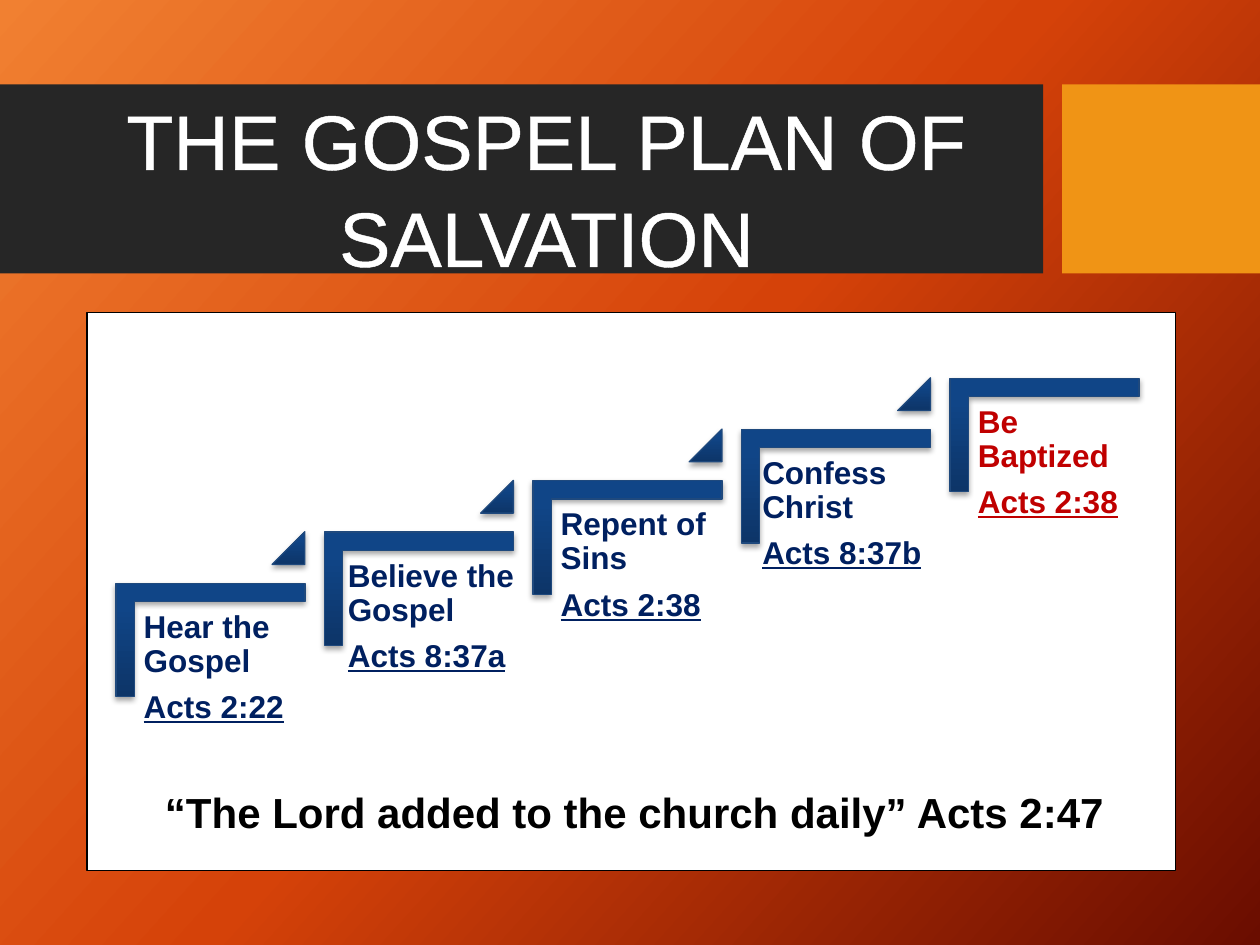
from lxml.etree import SubElement
from pptx import Presentation
from pptx.dml.color import RGBColor
from pptx.enum.shapes import MSO_SHAPE
from pptx.enum.text import MSO_ANCHOR, MSO_AUTO_SIZE, PP_ALIGN
from pptx.oxml.ns import qn
from pptx.util import Inches, Pt

WHITE = RGBColor(0xFF, 0xFF, 0xFF)
BLACK = RGBColor(0x00, 0x00, 0x00)
CHARCOAL = RGBColor(0x26, 0x26, 0x26)
AMBER = RGBColor(0xF0, 0x94, 0x15)
NAVY = RGBColor(0x00, 0x20, 0x60)
RED = RGBColor(0xC0, 0x00, 0x00)
STEP_LINE = RGBColor(0x1F, 0x49, 0x7D)
BACKGROUND_STOPS = [
    (0, RGBColor(0xF1, 0x80, 0x31)),
    (50, RGBColor(0xD5, 0x42, 0x09)),
    (100, RGBColor(0x6A, 0x0D, 0x00)),
]
STEP_STOPS = [
    (0, RGBColor(0x0D, 0x35, 0x68)),
    (80, RGBColor(0x10, 0x45, 0x87)),
    (100, RGBColor(0x0E, 0x45, 0x8A)),
]

FONT = "Arial"
STEP_ACROSS, STEP_UP = 1.655, 0.407
# action, verse, text left, text width, text colour
STEPS = [
    ("Hear the Gospel", "Acts 2:22", 1.07, 1.35, NAVY),
    ("Believe the Gospel", "Acts 8:37a", 2.69, 1.51, NAVY),
    ("Repent of Sins", "Acts 2:38", 4.38, 1.35, NAVY),
    ("Confess Christ", "Acts 8:37b", 5.98, 1.63, NAVY),
    ("Be Baptized", "Acts 2:38", 7.69, 1.35, RED),
]


def set_gradient(fill, element, stops, angle):
    """Fill with a linear gradient, angle clockwise, that ignores rotation."""
    fill.gradient()
    gradient = element.find(".//" + qn("a:gradFill"))
    for child in list(gradient):
        gradient.remove(child)
    gradient.set("rotWithShape", "0")
    stop_list = SubElement(gradient, qn("a:gsLst"))
    for position, color in stops:
        stop = SubElement(stop_list, qn("a:gs"), pos=str(position * 1000))
        SubElement(stop, qn("a:srgbClr"), val=str(color))
    SubElement(gradient, qn("a:lin"), ang=str(angle * 60000), scaled="0")


def add_shadow(shape):
    shape.shadow.inherit = False
    effects = shape.element.spPr.find(qn("a:effectLst"))
    shadow = SubElement(effects, qn("a:outerShdw"), blurRad=str(Pt(3.1)),
                        dist=str(Pt(1.8)), dir="5400000", rotWithShape="0")
    color = SubElement(shadow, qn("a:srgbClr"), val=str(BLACK))
    SubElement(color, qn("a:alpha"), val="35000")


def add_rectangle(slide, left, top, width, height, color, line_color=None):
    shape = slide.shapes.add_shape(MSO_SHAPE.RECTANGLE, Inches(left),
                                   Inches(top), Inches(width), Inches(height))
    shape.shadow.inherit = False
    shape.fill.solid()
    shape.fill.fore_color.rgb = color
    if line_color is None:
        shape.line.fill.background()
    else:
        shape.line.color.rgb = line_color
        shape.line.width = Pt(1)


def add_stair_shape(slide, kind, left, top, width, height, adjustments):
    shape = slide.shapes.add_shape(kind, Inches(left), Inches(top),
                                   Inches(width), Inches(height))
    for index, value in enumerate(adjustments):
        shape.adjustments[index] = value
    set_gradient(shape.fill, shape.element, STEP_STOPS, 270)
    shape.line.color.rgb = STEP_LINE
    shape.line.width = Pt(0.75)
    add_shadow(shape)
    return shape


def add_text_box(slide, left, top, width, height):
    box = slide.shapes.add_textbox(Inches(left), Inches(top),
                                   Inches(width), Inches(height))
    box.text_frame.word_wrap = True
    return box.text_frame


def add_run(paragraph, text, size, color, bold=False):
    run = paragraph.add_run()
    run.text = text
    run.font.name = FONT
    run.font.size = Pt(size)
    run.font.bold = bold
    run.font.color.rgb = color
    return run


def add_step_text(slide, action, verse, left, top, width, color):
    frame = add_text_box(slide, left, top, width, 1.18)
    frame.margin_left = frame.margin_right = Inches(0.07)
    frame.margin_top = frame.margin_bottom = Inches(0.07)
    paragraphs = [frame.paragraphs[0], frame.add_paragraph()]
    for paragraph, text in zip(paragraphs, (action, verse)):
        paragraph.line_spacing = 0.9
        paragraph.space_after = Pt(7)
        run = add_run(paragraph, text, 18, color, bold=True)
        run.font.underline = text == verse


def add_steps(slide):
    for index, (action, verse, left, width, color) in enumerate(STEPS):
        across, up = index * STEP_ACROSS, index * STEP_UP
        corner = add_stair_shape(slide, MSO_SHAPE.CORNER, 1.22 + across,
                                 4.33 - up, 0.9, 1.5, (0.161, 0.161))
        corner.rotation = 90
        add_step_text(slide, action, verse, left, 4.78 - up, width, color)
        if index < len(STEPS) - 1:
            add_stair_shape(slide, MSO_SHAPE.ISOSCELES_TRIANGLE,
                            2.16 + across, 4.22 - up, 0.26, 0.26, (1,))


def add_verse(slide, text):
    frame = add_text_box(slide, 0.94, 6.19, 8.19, 0.5)
    frame.auto_size = MSO_AUTO_SIZE.SHAPE_TO_FIT_TEXT
    paragraph = frame.paragraphs[0]
    paragraph.alignment = PP_ALIGN.CENTER
    add_run(paragraph, text, 24, BLACK, bold=True)


def set_title(slide, text):
    title = slide.shapes.title
    title.left, title.top = Inches(0.42), Inches(0.65)
    title.width, title.height = Inches(7.84), Inches(1.58)
    frame = title.text_frame
    frame.word_wrap = True
    frame.auto_size = MSO_AUTO_SIZE.SHAPE_TO_FIT_TEXT
    frame.vertical_anchor = MSO_ANCHOR.TOP
    paragraph = frame.paragraphs[0]
    paragraph.alignment = PP_ALIGN.CENTER
    paragraph.line_spacing = 1.05
    add_run(paragraph, text, 44, WHITE)
    run_properties = title.element.find(".//" + qn("a:rPr"))
    outline = SubElement(run_properties, qn("a:ln"), w=str(Pt(1.45)))
    outline_fill = SubElement(outline, qn("a:solidFill"))
    SubElement(outline_fill, qn("a:srgbClr"), val=str(WHITE))
    run_properties.insert(0, outline)
    # The title stands in front of the dark band.
    title.element.getparent().append(title.element)


def main():
    presentation = Presentation()
    presentation.slide_width = Inches(10)
    presentation.slide_height = Inches(7.5)
    slide = presentation.slides.add_slide(presentation.slide_layouts[5])
    set_gradient(slide.background.fill, slide.element, BACKGROUND_STOPS, 42)
    add_rectangle(slide, 0, 0.67, 8.28, 1.5, CHARCOAL)
    add_rectangle(slide, 8.43, 0.67, 1.57, 1.5, AMBER)
    add_rectangle(slide, 0.69, 2.48, 8.64, 4.43, WHITE, BLACK)
    add_steps(slide)
    add_verse(slide, "“The Lord added to the church daily” Acts 2:47")
    set_title(slide, "THE GOSPEL PLAN OF SALVATION")
    presentation.save("out.pptx")


if __name__ == "__main__":
    main()
